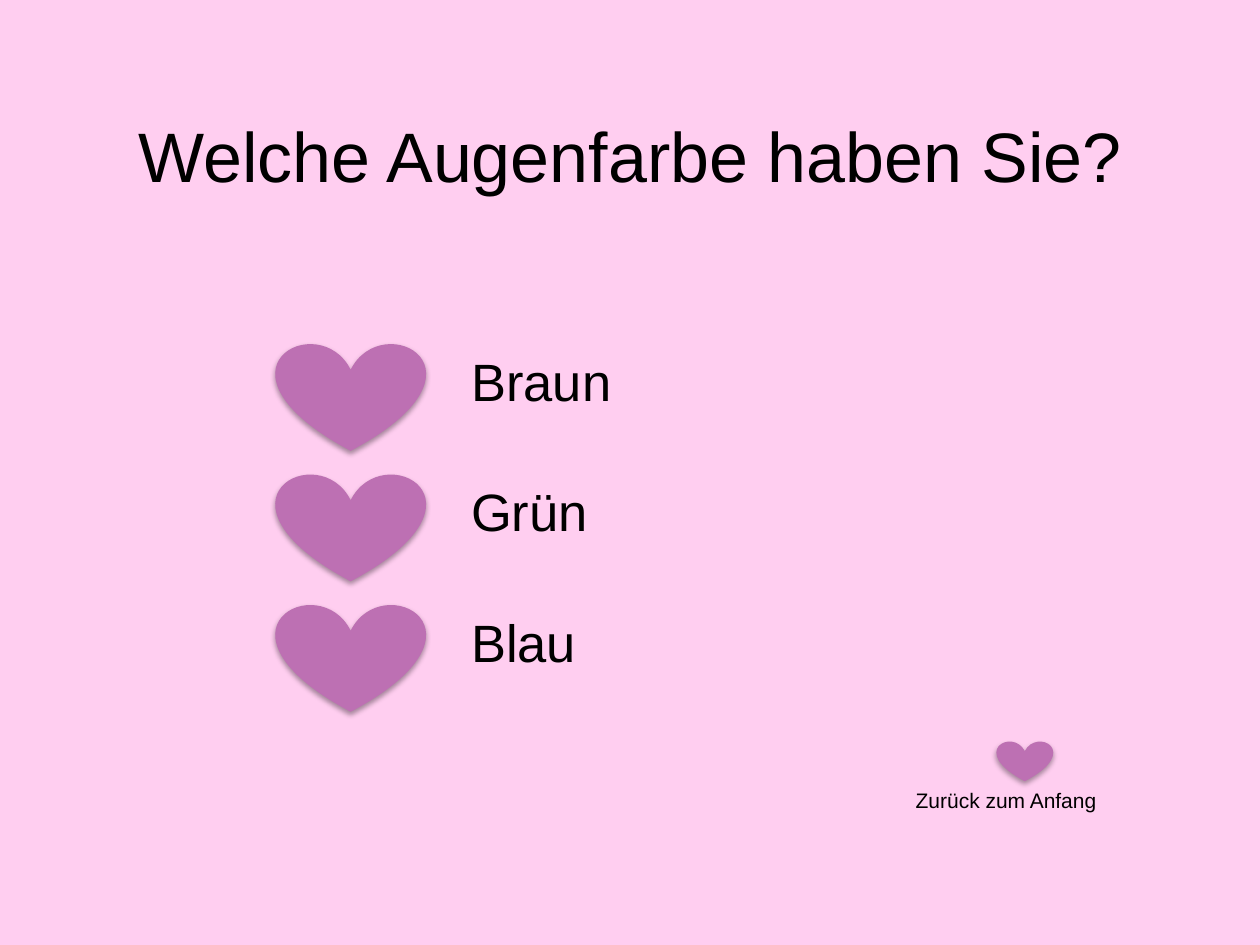
from lxml import etree
from pptx import Presentation
from pptx.dml.color import RGBColor
from pptx.enum.shapes import MSO_SHAPE
from pptx.enum.text import MSO_ANCHOR, PP_ALIGN
from pptx.oxml.ns import qn
from pptx.util import Cm, Pt

HEART = MSO_SHAPE.HEART
MIDDLE = MSO_ANCHOR.MIDDLE
CENTER = PP_ALIGN.CENTER
LEFT = PP_ALIGN.LEFT
COLORS = {"back": "FFCEF0", "heart": "BD70B3", "text": "000000"}
FONT = "Arial"


def color(name):
    return RGBColor.from_string(COLORS[name])


def write(frame, text, size, align=LEFT):
    frame.word_wrap = True
    para = frame.paragraphs[0]
    para.text = text
    para.alignment = align
    para.font.name = FONT
    para.font.size = Pt(size)
    para.font.color.rgb = color("text")


def add_label(slide, x, y, w, h, text, size):
    box = slide.shapes.add_textbox(Cm(x), Cm(y), Cm(w), Cm(h))
    write(box.text_frame, text, size)


def add_heart(slide, x, y, w, h):
    heart = slide.shapes.add_shape(HEART, Cm(x), Cm(y), Cm(w), Cm(h))
    heart.fill.solid()
    heart.fill.fore_color.rgb = color("heart")
    heart.line.fill.background()
    heart.shadow.inherit = False
    effects = heart._element.spPr.find(qn("a:effectLst"))
    shade = etree.SubElement(
        effects, qn("a:outerShdw"), blurRad=str(Pt(3.1)),
        dist=str(Pt(1.8)), dir="5400000", rotWithShape="0")
    tint = etree.SubElement(shade, qn("a:srgbClr"), val=COLORS["text"])
    etree.SubElement(tint, qn("a:alpha"), val="35000")


def add_title(slide, x, y, w, h, text):
    title = slide.shapes.title
    title.left, title.top = Cm(x), Cm(y)
    title.width, title.height = Cm(w), Cm(h)
    title.text_frame.vertical_anchor = MIDDLE
    write(title.text_frame, text, 40, CENTER)


def add_choices(slide, x, y, w, h, choices):
    pitch = h / len(choices)
    indent = 3.69
    for row, text in enumerate(choices):
        top = y + row * pitch
        add_heart(slide, x, top, 3.02, 2.18)
        add_label(slide, x + indent, top, w - indent, 1.55, text, 30)


def add_return(slide, x, y, w, h, text):
    add_heart(slide, x + 1.88, y, 1.14, 0.81)
    add_label(slide, x, y + 0.81, w, h - 0.81, text, 12)


def main():
    deck = Presentation()
    deck.slide_width, deck.slide_height = Cm(25.4), Cm(19.05)
    slide = deck.slides.add_slide(deck.slide_layouts[5])
    slide.background.fill.solid()
    slide.background.fill.fore_color.rgb = color("back")
    add_return(slide, 18.21, 14.94, 4.9, 1.57, "Zurück zum Anfang")
    add_title(slide, 1.27, 1.52, 22.86, 3.18, "Welche Augenfarbe haben Sie?")
    add_choices(slide, 5.56, 6.91, 14.13, 7.89, ["Braun", "Grün", "Blau"])
    deck.save("out.pptx")


if __name__ == "__main__":
    main()
